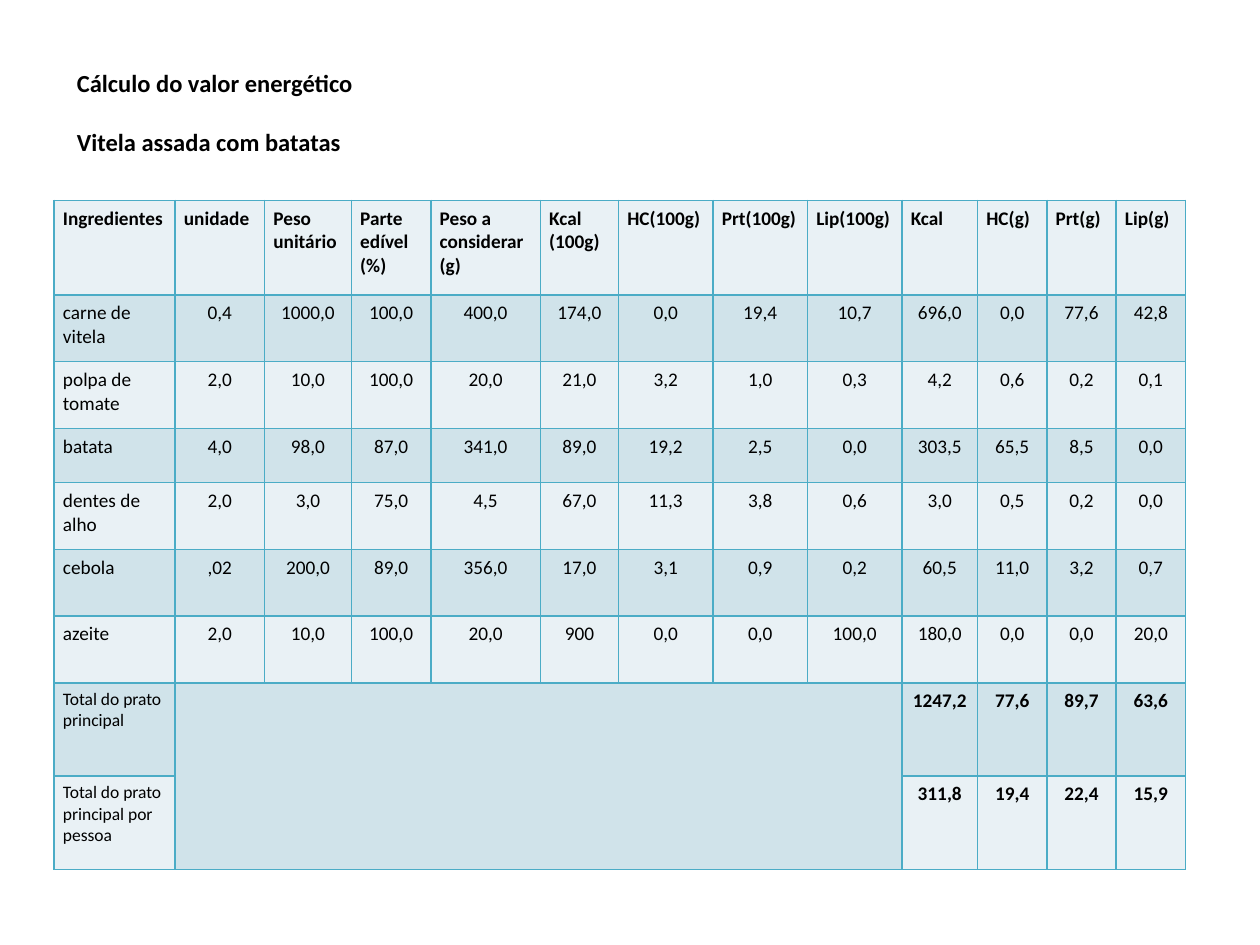
from dataclasses import dataclass

from lxml.etree import SubElement as Sub
from pptx import Presentation
from pptx.dml.color import RGBColor as Rgb
from pptx.enum.text import MSO_ANCHOR as Anchor, PP_ALIGN as Align
from pptx.oxml.ns import qn
from pptx.util import Inches, Pt

FONT = "Calibri"
HEX = {"text": "000000", "line": "4BACC6", "light": "E9F1F5", "dark": "D0E3EA"}
TITLE = ["Cálculo do valor energético", "Vitela assada com batatas"]
GAP = 8  # empty columns between a total's label and its values


@dataclass
class Row:
    high: float
    cells: list[str]
    head: bool = False
    total: bool = False


COLS = [0.96, 0.71, 0.69, 0.63, 0.87, 0.62, *[0.75] * 3, 0.6, *[0.55] * 3]
HEAD = ["Ingredientes", "unidade", "Peso unitário", "Parte edível (%)",
        "Peso a considerar (g)", "Kcal (100g)", "HC(100g)", "Prt(100g)",
        "Lip(100g)", "Kcal", "HC(g)", "Prt(g)", "Lip(g)"]
FOODS = [
    ("carne de vitela", 0.53, "0,4 1000,0 100,0 400,0 174,0 0,0 19,4 10,7 696,0 0,0 77,6 42,8"),
    ("polpa de tomate", 0.53, "2,0 10,0 100,0 20,0 21,0 3,2 1,0 0,3 4,2 0,6 0,2 0,1"),
    ("batata", 0.43, "4,0 98,0 87,0 341,0 89,0 19,2 2,5 0,0 303,5 65,5 8,5 0,0"),
    ("dentes de alho", 0.53, "2,0 3,0 75,0 4,5 67,0 11,3 3,8 0,6 3,0 0,5 0,2 0,0"),
    ("cebola", 0.53, ",02 200,0 89,0 356,0 17,0 3,1 0,9 0,2 60,5 11,0 3,2 0,7"),
    ("azeite", 0.53, "2,0 10,0 100,0 20,0 900 0,0 0,0 100,0 180,0 0,0 0,0 20,0"),
]
TOTALS = [
    ("Total do prato principal", "1247,2 77,6 89,7 63,6"),
    ("Total do prato principal por pessoa", "311,8 19,4 22,4 15,9"),
]
ROWS = [
    Row(0.75, HEAD, head=True),
    *[Row(high, [name, *vals.split()]) for name, high, vals in FOODS],
    *[Row(0.74, [name, *[""] * GAP, *vals.split()], total=True)
      for name, vals in TOTALS],
]


def style(para, size: float, bold: bool, align) -> None:
    para.alignment = align
    font = para.font
    font.name, font.size, font.bold = FONT, Pt(size), bold
    font.color.rgb = Rgb.from_string(HEX["text"])


def border(cell) -> None:
    props = cell._tc.get_or_add_tcPr()
    for side in ("lnL", "lnR", "lnT", "lnB"):
        line = Sub(props, qn(f"a:{side}"), w=str(Pt(1)))
        fill = Sub(line, qn("a:solidFill"))
        Sub(fill, qn("a:srgbClr"), val=HEX["line"])


def draw_cell(cell, text: str, row: Row, first: bool, tint: str) -> None:
    border(cell)  # lines must come before the fill in the XML
    cell.fill.solid()
    cell.fill.fore_color.rgb = Rgb.from_string(HEX[tint])
    cell.margin_left = cell.margin_right = Inches(0.07)
    cell.margin_top = cell.margin_bottom = Inches(0.05)
    cell.text = text
    style(cell.text_frame.paragraphs[0],
          size=10 if row.total and first else 11,
          bold=row.head or (row.total and not first),
          align=Align.LEFT if row.head or first else Align.CENTER)


def draw_title(shape) -> None:
    shape.left, shape.top = Inches(0.51), Inches(0.36)
    shape.width, shape.height = Inches(8.62), Inches(1.06)
    frame = shape.text_frame
    frame.word_wrap = True
    frame.vertical_anchor = Anchor.MIDDLE
    frame.text = "\n".join(TITLE)
    for para in frame.paragraphs:
        style(para, 14, True, Align.LEFT)
    frame.paragraphs[1].space_before = Pt(17)


def draw_table(slide) -> None:
    frame = slide.shapes.add_table(
        len(ROWS), len(COLS), Inches(0.43), Inches(1.59),
        Inches(sum(COLS)), Inches(sum(row.high for row in ROWS)))
    table = frame.table
    table.first_row = table.horz_banding = False
    for col, wide in zip(table.columns, COLS):
        col.width = Inches(wide)
    for r, row in enumerate(ROWS):
        table.rows[r].height = Inches(row.high)
        tint = "dark" if r % 2 else "light"
        for c, text in enumerate(row.cells):
            draw_cell(table.cell(r, c), text, row, c == 0, tint)
    last = len(ROWS) - 1
    table.cell(last - 1, 1).merge(table.cell(last, GAP))


def main() -> None:
    prs = Presentation()
    prs.slide_width, prs.slide_height = Inches(10), Inches(7.5)
    slide = prs.slides.add_slide(prs.slide_layouts[5])
    draw_title(slide.shapes.title)
    draw_table(slide)
    prs.save("out.pptx")


if __name__ == "__main__":
    main()
